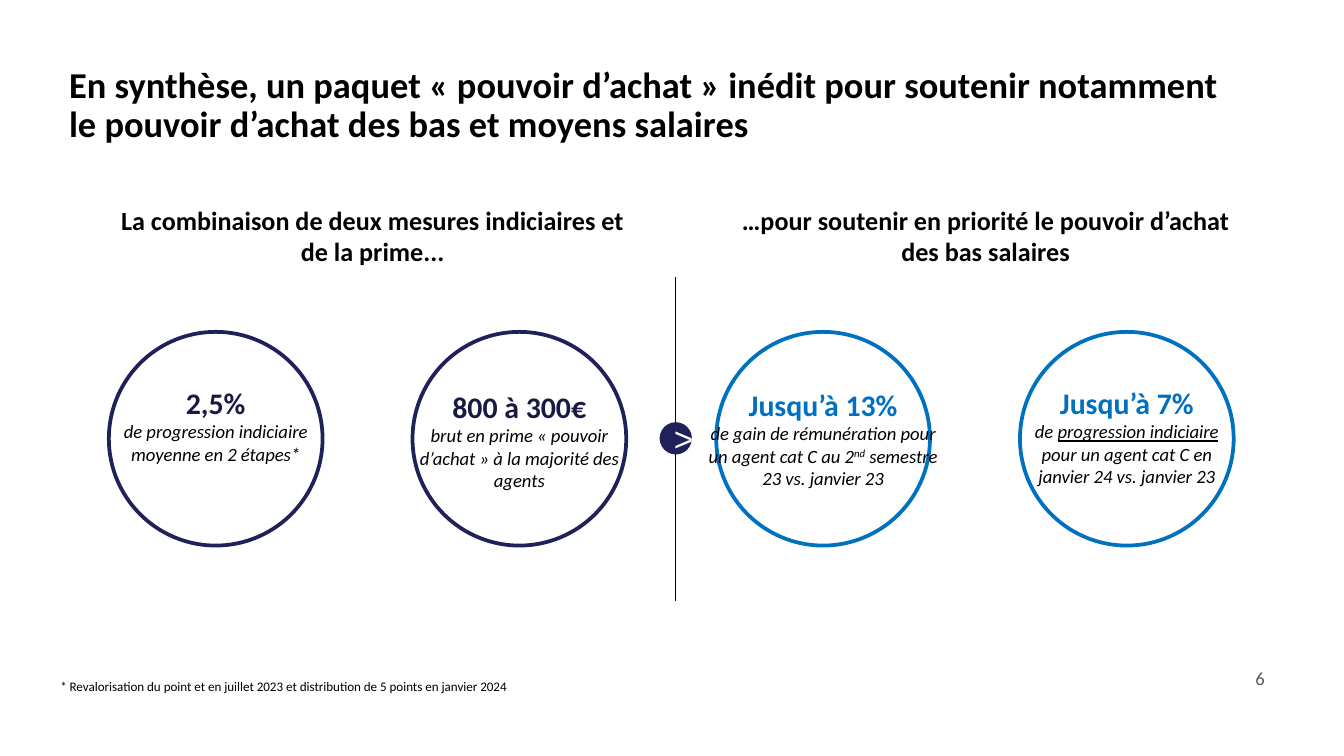
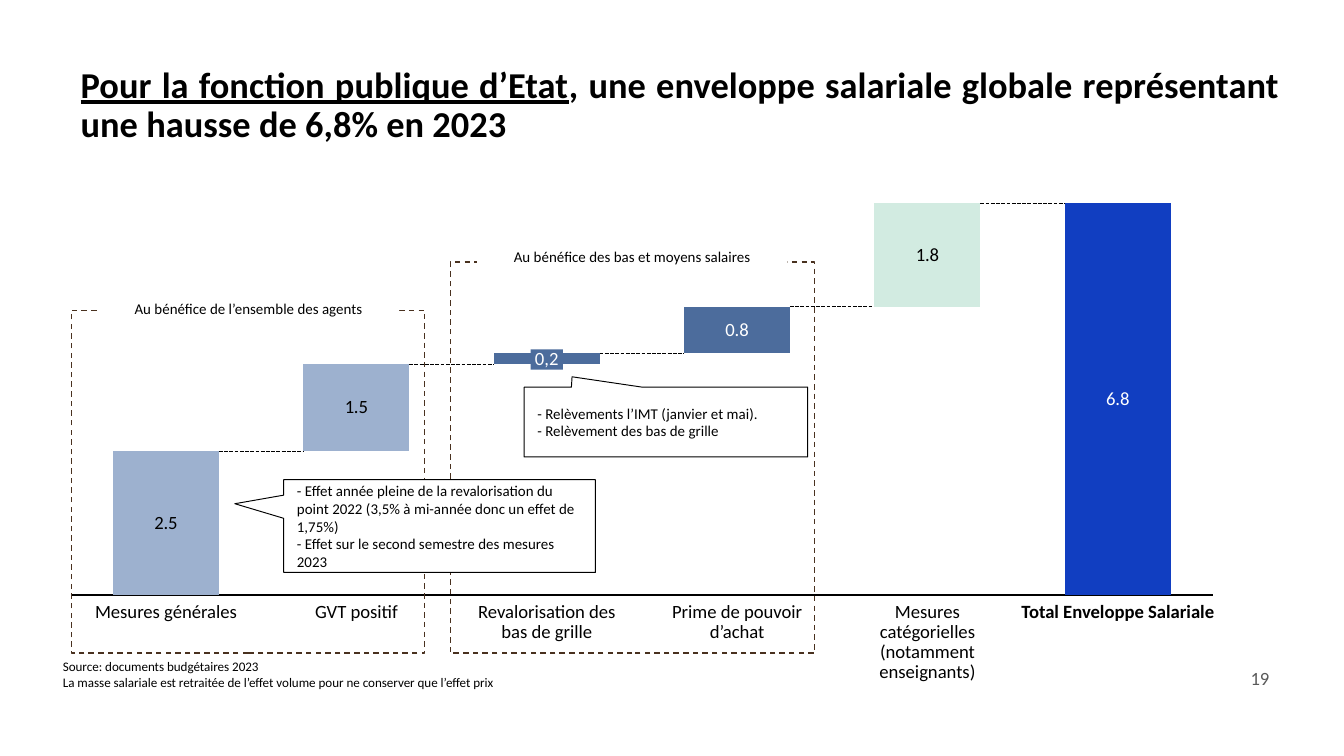
from dataclasses import dataclass
from itertools import accumulate
from typing import Any, Optional, Sequence, Union

from pptx import Presentation
from pptx import util as u
from pptx.chart import data as chart_data
from pptx.dml import color as dml_color
from pptx.enum import chart as chart_enum
from pptx.enum import dml, shapes, text
from pptx.oxml import ns, parse_xml

Pt = u.Pt
ALIGN = text.PP_ALIGN
ANCHOR = text.MSO_ANCHOR
SHAPE = shapes.MSO_SHAPE
DASH = dml.MSO_LINE


@dataclass(frozen=True)
class Theme:
    font: str = "Calibri"
    symbol_font: str = "Arial"
    black: str = "000000"
    white: str = "FFFFFF"
    grey: str = "595959"
    navy: str = "21215A"
    deep_navy: str = "191944"
    sky: str = "0070C0"
    brown: str = "49311F"
    pale_blue: str = "9DB1CF"
    slate: str = "4C6C9C"
    mint: str = "D2EBE1"
    royal: str = "113EC1"
    title: float = 19.5
    symbol: float = 18
    figure: float = 16
    heading: float = 14
    body: float = 10
    small: float = 8
    note: float = 7


THEME = Theme()
DEFAULT_MARGINS = (7.2, 3.6, 7.2, 3.6)
NO_MARGINS = (0, 0, 0, 0)


@dataclass(frozen=True)
class Box:
    left: float
    top: float
    width: float
    height: float

    def lengths(self) -> tuple:
        return Pt(self.left), Pt(self.top), Pt(self.width), Pt(self.height)


@dataclass(frozen=True)
class Span:
    """A run of text; None keeps the format of the whole text."""
    text: str
    size: Optional[float] = None
    color: Optional[str] = None
    bold: Optional[bool] = None
    italic: Optional[bool] = None
    underline: bool = False
    superscript: bool = False


Para = Union[str, Sequence[Span]]


@dataclass(frozen=True)
class Circle:
    figure: str
    lines: Sequence[Para]
    line_color: str
    figure_color: str
    text_top: float
    text_width: float = 124.6


@dataclass(frozen=True)
class Column:
    label: str
    value: float
    color: str
    label_width: float
    label_height: float = 21.6
    value_color: Optional[str] = None
    wrap: bool = True
    bold: bool = False
    total: bool = False


@dataclass(frozen=True)
class Group:
    caption: str
    frame: Box
    caption_box: Box


@dataclass(frozen=True)
class Callout:
    lines: Sequence[str]
    box: Box
    tip: tuple


def rgb(code: str) -> dml_color.RGBColor:
    return dml_color.RGBColor.from_string(code)


def write(frame: Any, paras: Sequence[Para], *, size: float = THEME.body,
          color: str = THEME.black, font: str = THEME.font, bold: bool = False,
          italic: bool = False, align: Any = ALIGN.LEFT, anchor: Any = ANCHOR.TOP,
          spacing: float = 1.0, margins: tuple = DEFAULT_MARGINS,
          wrap: bool = True) -> None:
    frame.word_wrap = wrap
    frame.auto_size = text.MSO_AUTO_SIZE.NONE
    frame.vertical_anchor = anchor
    (frame.margin_left, frame.margin_top,
     frame.margin_right, frame.margin_bottom) = map(Pt, margins)
    for index, spans in enumerate(paras):
        para = frame.paragraphs[0] if index == 0 else frame.add_paragraph()
        para.alignment = align
        para.line_spacing = spacing
        for span in [Span(spans)] if isinstance(spans, str) else spans:
            run = para.add_run()
            run.text = span.text
            run.font.name = font
            run.font.size = Pt(span.size or size)
            run.font.bold = bold if span.bold is None else span.bold
            run.font.italic = italic if span.italic is None else span.italic
            run.font.underline = span.underline
            run.font.color.rgb = rgb(span.color or color)
            if span.superscript:
                run.font._element.set("baseline", "30000")


def add_text(page: Any, box: Box, paras: Sequence[Para], **style: Any) -> None:
    write(page.shapes.add_textbox(*box.lengths()).text_frame, paras, **style)


def add_shape(page: Any, kind: Any, box: Box, *, fill: Optional[str] = None,
              line: Optional[str] = None, width: float = 0.75, dash: Any = None) -> Any:
    shape = page.shapes.add_shape(kind, *box.lengths())
    shape.shadow.inherit = False
    if fill:
        shape.fill.solid()
        shape.fill.fore_color.rgb = rgb(fill)
    else:
        shape.fill.background()
    if line:
        shape.line.color.rgb = rgb(line)
        shape.line.width = Pt(width)
        if dash:
            shape.line.dash_style = dash
    else:
        shape.line.fill.background()
    return shape


def add_line(page: Any, start: tuple, end: tuple, dash: Any = None) -> None:
    line = page.shapes.add_connector(shapes.MSO_CONNECTOR.STRAIGHT, *map(Pt, start + end))
    line.line.color.rgb = rgb(THEME.black)
    line.line.width = Pt(0.25)
    if dash:
        line.line.dash_style = dash
    line._element.spPr.append(parse_xml(f'<a:effectLst {ns.nsdecls("a")}/>'))


def add_page(deck: Any, title: Para, box: Box, number: int, align: Any = ALIGN.LEFT) -> Any:
    """Add a page with its title and page number."""
    page = deck.slides.add_slide(deck.slide_layouts[5])
    holder = page.shapes.title
    holder.left, holder.top, holder.width, holder.height = box.lengths()
    write(holder.text_frame, [title], size=THEME.title, bold=True, align=align,
          anchor=ANCHOR.MIDDLE, spacing=0.9, margins=(5, 2.9, 5, 2.9))
    add_text(page, Box(659.5, 353.5, 31, 19.4), [str(number)],
             color=THEME.grey, align=ALIGN.CENTER)
    return page


CIRCLES = [
    Circle("2,5%", ["de progression indiciaire moyenne en 2 étapes*"],
           THEME.navy, THEME.deep_navy, 202.3),
    Circle("800 à 300€", ["brut en prime « pouvoir d’achat » à la majorité des", "agents"],
           THEME.navy, THEME.deep_navy, 204.5),
    Circle("Jusqu’à 13%",
           [[Span("de gain de rémunération pour un agent cat C au 2"),
             Span("nd", superscript=True), Span(" semestre")],
            "23 vs. janvier 23"],
           THEME.sky, THEME.sky, 203.5, 137.5),
    Circle("Jusqu’à 7%",
           [[Span("de "), Span("progression indiciaire", underline=True),
             Span(" pour un agent cat C en janvier 24 vs. janvier 23")]],
           THEME.sky, THEME.sky, 202.3),
]
HEADINGS = ["La combinaison de deux mesures indiciaires et de la prime...",
            "…pour soutenir en priorité le pouvoir d’achat des bas salaires"]


def build_summary(deck: Any) -> None:
    page = add_page(deck, "En synthèse, un paquet « pouvoir d’achat » inédit pour soutenir "
                    "notamment le pouvoir d’achat des bas et moyens salaires",
                    Box(32, 28, 630, 57.6), 6)
    diameter, first, pitch = 114.5, 58.3, 162.7
    for index, circle in enumerate(CIRCLES):
        left = first + index * pitch
        add_shape(page, SHAPE.OVAL, Box(left, 177.8, diameter, diameter),
                  fill=THEME.white, line=circle.line_color, width=2)
        headline = [Span(circle.figure, THEME.figure, circle.figure_color, True, False)]
        text_left = left + (diameter - circle.text_width) / 2
        add_text(page, Box(text_left, circle.text_top, circle.text_width, 75),
                 [headline, *circle.lines], italic=True, align=ALIGN.CENTER)
    add_line(page, (362, 148.3), (362, 321.8))
    badge = add_shape(page, SHAPE.OVAL, Box(353.4, 226.2, 17.3, 17.3), fill=THEME.navy)
    write(badge.text_frame, [">"], size=THEME.symbol, font=THEME.symbol_font,
          color=THEME.white, align=ALIGN.CENTER, anchor=ANCHOR.MIDDLE)
    for index, heading in enumerate(HEADINGS):
        add_text(page, Box(51 + index * 328.4, 105.8, 297.4, 41), [heading],
                 size=THEME.heading, bold=True, align=ALIGN.CENTER)
    add_text(page, Box(25.2, 360, 323.3, 24.5),
             ["* Revalorisation du point et en juillet 2023 et distribution "
              "de 5 points en janvier 2024"], size=THEME.note)


COLUMNS = [
    Column("Mesures générales", 2.5, THEME.pale_blue, 88.6, 10.8, THEME.black, wrap=False),
    Column("GVT positif", 1.5, THEME.pale_blue, 56.2, 10.8, THEME.black, wrap=False),
    Column("Revalorisation des bas de grille", 0.2, THEME.slate, 78.5),
    Column("Prime de pouvoir d’achat", 0.8, THEME.slate, 77.8, value_color=THEME.white),
    Column("Mesures catégorielles (notamment enseignants)", 1.8, THEME.mint, 62, 43.2,
           THEME.black),
    Column("Total Enveloppe Salariale", 6.8, THEME.royal, 57.6, 26.6, THEME.white,
           wrap=False, bold=True, total=True),
]
GROUPS = [
    Group("Au bénéfice de l’ensemble des agents",
          Box(38.2, 166.3, 189.4, 183.6), Box(52.6, 157, 161.3, 17.3)),
    Group("Au bénéfice des bas et moyens salaires",
          Box(241.2, 140.4, 195.1, 209.5), Box(255.6, 128.9, 166.3, 17.3)),
]
CALLOUTS = [
    Callout(["- Effet année pleine de la revalorisation du point 2022 "
             "(3,5% à mi-année donc un effet de 1,75%)",
             "- Effet sur le second semestre des mesures 2023"],
            Box(152, 257, 167, 49.7), (-0.657, -0.241)),
    Callout(["- Relèvements l’IMT (janvier et mai).", "- Relèvement des bas de grille"],
            Box(280.8, 207.4, 151.9, 37.4), (-0.331, -0.649)),
]
CHART_BOX = Box(31.7, 102.2, 625, 223.2)
PLOT_SHARE = Box(0.01, 0.029, 0.979, 0.942)
PLOT = Box(CHART_BOX.left + PLOT_SHARE.left * CHART_BOX.width,
           CHART_BOX.top + PLOT_SHARE.top * CHART_BOX.height,
           PLOT_SHARE.width * CHART_BOX.width, PLOT_SHARE.height * CHART_BOX.height)
GAP = 80
TOTAL = COLUMNS[-1].value


def add_waterfall(page: Any, levels: Sequence[float]) -> None:
    """Stack each step on the running total; the first and last columns stand on the axis."""
    source = chart_data.CategoryChartData()
    source.categories = [str(index + 1) for index in range(len(COLUMNS))]
    inner = range(1, len(COLUMNS) - 1)
    bases = [levels[i - 1] if i in inner else c.value for i, c in enumerate(COLUMNS)]
    source.add_series("Series 1", bases)
    source.add_series("Series 2", [c.value if i in inner else None
                                   for i, c in enumerate(COLUMNS)])
    chart = page.shapes.add_chart(chart_enum.XL_CHART_TYPE.COLUMN_STACKED,
                                  *CHART_BOX.lengths(), source).chart
    chart.has_legend = chart.has_title = False
    chart.font.name, chart.font.size = THEME.font, Pt(THEME.body)
    chart.font.color.rgb = rgb(THEME.black)
    plot = chart.plots[0]
    plot.gap_width, plot.overlap, plot.vary_by_categories = GAP, 100, False
    values, steps = chart.value_axis, chart.category_axis
    values.minimum_scale, values.maximum_scale = 0, TOTAL
    values.has_major_gridlines = values.visible = False
    steps.tick_label_position = chart_enum.XL_TICK_LABEL_POSITION.NONE
    steps.major_tick_mark = steps.minor_tick_mark = chart_enum.XL_TICK_MARK.NONE
    steps.format.line.color.rgb = rgb(THEME.black)
    steps.format.line.width = Pt(0.75)
    base, rise = plot.series
    base.format.fill.background()
    rise.format.fill.solid()
    rise.format.fill.fore_color.rgb = rgb(THEME.slate)
    for series in (base, rise):
        series.data_labels.show_value = False
    for index, column in enumerate(COLUMNS):
        point = (rise if index in inner else base).points[index]
        point.format.fill.solid()
        point.format.fill.fore_color.rgb = rgb(column.color)
        if column.value_color:
            label = point.data_label
            label.position = chart_enum.XL_LABEL_POSITION.CENTER
            label.font.name, label.font.size = THEME.font, Pt(THEME.body)
            label.font.color.rgb = rgb(column.value_color)
    area = chart._chartSpace.chart.plotArea
    for old in area.findall(ns.qn("c:layout")):
        area.remove(old)
    places = zip("xywh", (PLOT_SHARE.left, PLOT_SHARE.top, PLOT_SHARE.width, PLOT_SHARE.height))
    area.insert(0, parse_xml(
        f'<c:layout {ns.nsdecls("c")}><c:manualLayout><c:layoutTarget val="inner"/>'
        '<c:xMode val="edge"/><c:yMode val="edge"/>'
        + "".join(f'<c:{name} val="{value}"/>' for name, value in places)
        + '</c:manualLayout></c:layout>'))


def build_envelope(deck: Any) -> None:
    page = add_page(deck, [Span("Pour la fonction publique d’Etat", underline=True),
                           Span(", une enveloppe salariale globale représentant "
                                "une hausse de 6,8% en 2023")],
                    Box(38.2, 28, 652.3, 57.6), 19, ALIGN.JUSTIFY)
    pitch = PLOT.width / len(COLUMNS)
    half_bar = pitch / (1 + GAP / 100) / 2
    centers = [PLOT.left + (index + 0.5) * pitch for index in range(len(COLUMNS))]
    levels = [round(v, 1) for v in accumulate(c.value for c in COLUMNS if not c.total)]
    for level, center, following in zip(levels, centers, centers[1:]):
        y = PLOT.top + PLOT.height * (1 - level / TOTAL)
        add_line(page, (center + half_bar, y), (following - half_bar, y), DASH.LONG_DASH)
    add_waterfall(page, levels)
    for column, center in zip(COLUMNS, centers):
        add_text(page, Box(center - column.label_width / 2, 322.6, column.label_width,
                           column.label_height), [column.label], bold=column.bold,
                 align=ALIGN.CENTER, spacing=0.9, margins=NO_MARGINS, wrap=column.wrap)
    tag = add_shape(page, SHAPE.RECTANGLE, Box(centers[2] - 8.65, 187.2, 17.3, 10.8),
                    fill=THEME.slate)
    write(tag.text_frame, ["0,2"], color=THEME.white, align=ALIGN.CENTER,
          anchor=ANCHOR.MIDDLE, spacing=0.9, margins=(1.4, 0, 1.4, 0), wrap=False)
    for group in GROUPS:
        add_shape(page, SHAPE.RECTANGLE, group.frame, line=THEME.brown, dash=DASH.DASH)
        caption = add_shape(page, SHAPE.RECTANGLE, group.caption_box, fill=THEME.white)
        write(caption.text_frame, [group.caption], size=THEME.small, align=ALIGN.CENTER)
    for callout in CALLOUTS:
        bubble = add_shape(page, SHAPE.RECTANGULAR_CALLOUT, callout.box,
                           fill=THEME.white, line=THEME.black, width=0.5)
        bubble.adjustments[0], bubble.adjustments[1] = callout.tip
        write(bubble.text_frame, callout.lines, size=THEME.small, anchor=ANCHOR.MIDDLE)
    add_text(page, Box(26.6, 349.2, 389.5, 24.5),
             ["Source: documents budgétaires 2023",
              "La masse salariale est retraitée de l’effet volume pour ne conserver "
              "que l’effet prix"], size=THEME.note)


def main() -> None:
    deck = Presentation()
    deck.slide_width, deck.slide_height = Pt(720), Pt(405)
    build_summary(deck)
    build_envelope(deck)
    deck.save("out.pptx")


if __name__ == "__main__":
    main()
